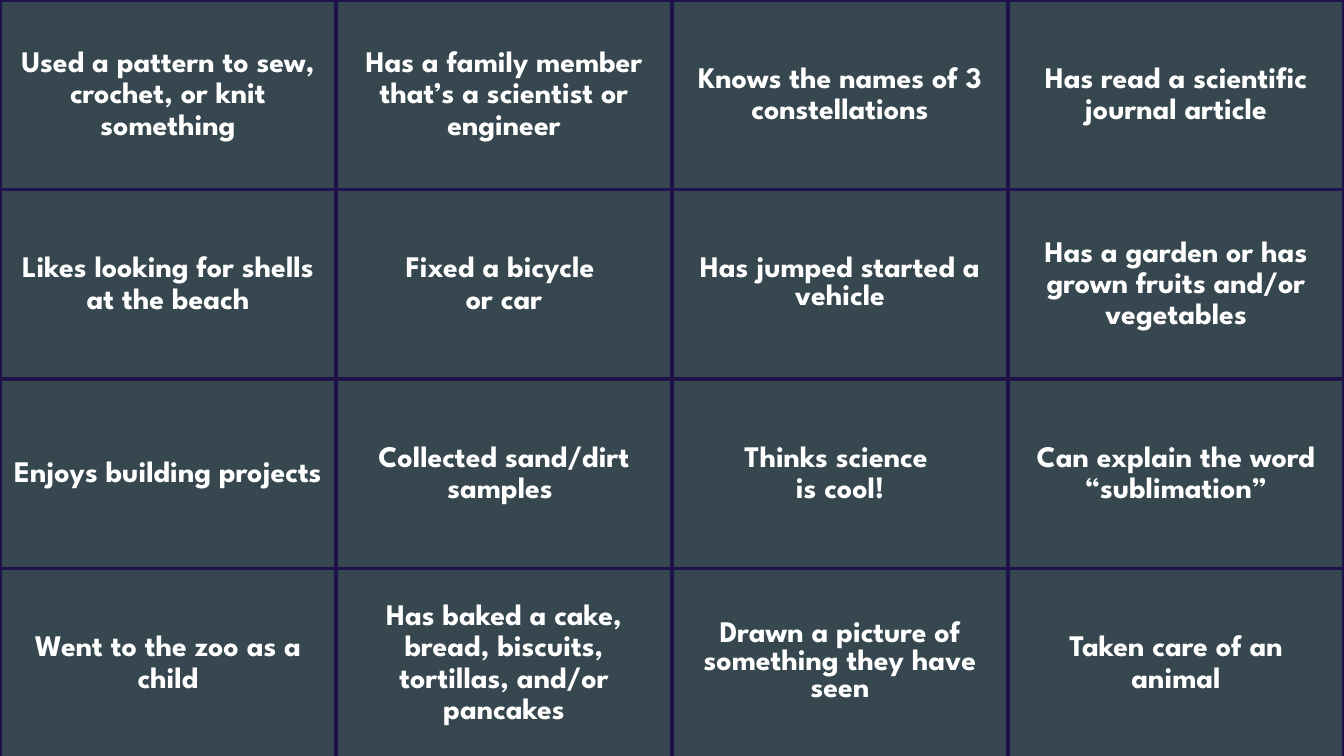
from dataclasses import dataclass

from lxml import etree
from pptx import Presentation
from pptx import util as u
from pptx.dml.color import RGBColor
from pptx.enum import text
from pptx.oxml import ns

WIDE, HIGH = 10, 5.625
INK, BACK, RULE = "FFFFFF", "37474F", "20124D"
FACE = "League Spartan"
COLS = 4


@dataclass
class Square:
    words: str
    pitch: float = 1.15


CARD = [
    Square("Used a pattern to sew, crochet, or knit something"),
    Square("Has a family member that’s a scientist or engineer"),
    Square("Knows the names of 3 constellations"),
    Square("Has read a scientific journal article"),
    Square("Likes looking for shells at the beach"),
    Square("Fixed a bicycle \nor car"),
    Square("Has jumped started a vehicle", 1.0),
    Square("Has a garden or has grown fruits and/or vegetables"),
    Square("Enjoys building projects"),
    Square("Collected sand/dirt samples "),
    Square("Thinks science \nis cool!"),
    Square("Can explain the word “sublimation”"),
    Square("Went to the zoo as a child"),
    Square("Has baked a cake, bread, biscuits, tortillas, and/or pancakes"),
    Square("Drawn a picture of something they have seen", 1.0),
    Square("Taken care of an animal"),
]


def paint(fill, tone: str) -> None:
    fill.solid()
    fill.fore_color.rgb = RGBColor.from_string(tone)


def border(cell, tone: str, width: float) -> None:
    props = cell._tc.get_or_add_tcPr()
    for spot, side in enumerate(("lnL", "lnR", "lnT", "lnB")):
        line = etree.Element(ns.qn(f"a:{side}"), w=str(u.Pt(width)))
        solid = etree.SubElement(line, ns.qn("a:solidFill"))
        etree.SubElement(solid, ns.qn("a:srgbClr"), val=tone)
        props.insert(spot, line)


def draw(cell, square: Square) -> None:
    cell.fill.background()
    border(cell, RULE, 2.25)
    cell.vertical_anchor = text.MSO_ANCHOR.MIDDLE
    cell.margin_left = cell.margin_right = u.Inches(0.1)
    cell.margin_top = cell.margin_bottom = u.Inches(0.1)
    cell.text_frame.text = square.words
    for para in cell.text_frame.paragraphs:
        para.alignment = text.PP_ALIGN.CENTER
        para.line_spacing = square.pitch
        para.font.name = FACE
        para.font.size = u.Pt(16)
        para.font.bold = True
        paint(para.font.fill, INK)


def main() -> None:
    deck = Presentation()
    deck.slide_width, deck.slide_height = u.Inches(WIDE), u.Inches(HIGH)
    slide = deck.slides.add_slide(deck.slide_layouts[6])
    paint(slide.background.fill, BACK)
    rows = len(CARD) // COLS
    frame = slide.shapes.add_table(
        rows, COLS, 0, 0, u.Inches(WIDE), u.Inches(1.41 * rows)
    )
    grid = frame.table
    grid.first_row = grid.horz_banding = False
    for spot, square in enumerate(CARD):
        draw(grid.cell(*divmod(spot, COLS)), square)
    deck.save("out.pptx")


if __name__ == "__main__":
    main()
